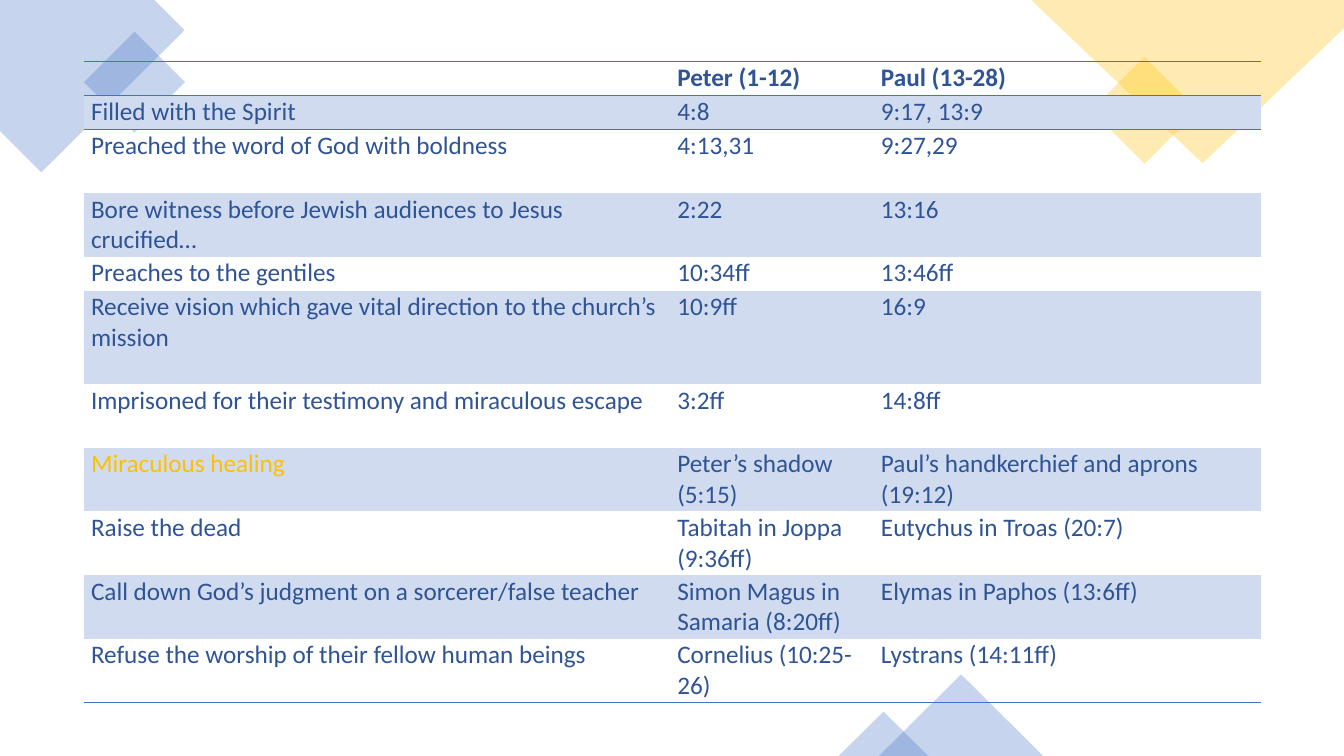
import math
from lxml import etree
from pptx import Presentation
from pptx import util as u
from pptx.dml.color import RGBColor
from pptx.enum import shapes
from pptx.oxml import ns

COLORS = {"blue": "4472C4", "gold": "FFC000", "ink": "2F5496", "band": "D0DBF0"}
COLS, ROWS = 160, 90
NO_STYLE = "{2D5ABB26-0587-4C30-8999-92F81FD0307C}"

# First cell, Peter, Paul, height in text lines
ACTS = [
    ("", "Peter (1-12)", "Paul (13-28)", 1),
    ("Filled with the Spirit", "4:8", "9:17, 13:9", 1),
    ("Preached the word of God with boldness", "4:13,31", "9:27,29", 2),
    ("Bore witness before Jewish audiences to Jesus crucified…", "2:22", "13:16", 2),
    ("Preaches to the gentiles", "10:34ff", "13:46ff", 1),
    ("Receive vision which gave vital direction to the church’s mission",
     "10:9ff", "16:9", 3),
    ("Imprisoned for their testimony and miraculous escape", "3:2ff", "14:8ff", 2),
    ("Miraculous healing", "Peter’s shadow (5:15)",
     "Paul’s handkerchief and aprons (19:12)", 2),
    ("Raise the dead", "Tabitah in Joppa (9:36ff)", "Eutychus in Troas (20:7)", 2),
    ("Call down God’s judgment on a sorcerer/false teacher",
     "Simon Magus in Samaria (8:20ff)", "Elymas in Paphos (13:6ff)", 2),
    ("Refuse the worship of their fellow human beings", "Cornelius (10:25-26)",
     "Lystrans (14:11ff)", 2),
]
HIGHLIGHT = "Miraculous healing"
COL_SHARES = (0.498, 0.173, 0.329)

prs = Presentation()
prs.slide_width, prs.slide_height = u.Inches(13.333), u.Inches(7.5)


def gx(cols):
    return round(cols * prs.slide_width / COLS)


def gy(rows):
    return round(rows * prs.slide_height / ROWS)


def tint(sp, color, rot=0):
    """Translucent fill, no line, no shadow."""
    sp.shadow.inherit = False
    sp.line.fill.background()
    sp.fill.solid()
    sp.fill.fore_color.rgb = RGBColor.from_string(COLORS[color])
    clr = sp.fill._xPr.find(".//" + ns.qn("a:srgbClr"))
    etree.SubElement(clr, ns.qn("a:alpha"), val="30000")
    sp.rotation = rot


def add_preset(s, kind, box, color, rot=0):
    x, y, w, h = box
    sp = s.shapes.add_shape(kind, gx(x), gy(y), gx(w), gy(h))
    tint(sp, color, rot)


def add_turned_outline(s, points, centre, color, rot):
    """Turn the outline back about its centre, then rotate the shape into place."""
    a = math.radians(-rot)
    cx, cy = centre
    turned = []
    for x, y in points:
        dx, dy = x - cx, y - cy
        turned.append((gx(cx + dx * math.cos(a) - dy * math.sin(a)),
                       gy(cy + dx * math.sin(a) + dy * math.cos(a))))
    fb = s.shapes.build_freeform(*turned[0])
    fb.add_line_segments(turned[1:], close=True)
    tint(fb.convert_to_shape(), color, rot)


def top_left_diamonds(s, x, y):
    outline = [(18.36, 0), (0, 0), (0, 15.6), (4.92, 20.52), (21.96, 3.6)]
    add_turned_outline(s, [(x + px, y + py) for px, py in outline],
                       (x + 7.08, y + 5.7), "blue", 315)
    add_preset(s, shapes.MSO_SHAPE.RECTANGLE,
               (x + 11.76, y + 5.52, 8.52, 8.52), "blue", 315)


def top_right_diamonds(s, x, y):
    add_preset(s, shapes.MSO_SHAPE.RECTANGLE, (x + 9, y + 8.64, 9, 9), "gold", 315)
    outline = [(37.24, 0), (0, 0), (20.4, 19.44), (37.24, 3.36)]
    add_turned_outline(s, [(x + px, y + py) for px, py in outline],
                       (x + 18.62, y + 9.72), "gold", 180)


def bottom_triangles(s, x, y):
    for dx, dy, w, h in [(4.8, 0, 19.56, 9.72), (0, 4.44, 10.68, 5.28)]:
        add_preset(s, shapes.MSO_SHAPE.ISOSCELES_TRIANGLE,
                   (x + dx, y + dy, w, h), "blue")


def add_border(cell, side):
    ln = etree.SubElement(cell._tc.get_or_add_tcPr(), ns.qn("a:ln" + side),
                          w=str(u.Pt(1)))
    fill = etree.SubElement(ln, ns.qn("a:solidFill"))
    etree.SubElement(fill, ns.qn("a:srgbClr"), val=COLORS["blue"])


def fill_cell(cell, words, row):
    cell.margin_left = cell.margin_right = u.Inches(0.07)
    cell.margin_top, cell.margin_bottom = u.Inches(0.01), 0
    # Rules above and below the header, and under the last row
    if row < 2:
        add_border(cell, "T")
    if row in (0, len(ACTS) - 1):
        add_border(cell, "B")
    # Odd rows are banded
    if row % 2:
        cell.fill.solid()
        cell.fill.fore_color.rgb = RGBColor.from_string(COLORS["band"])
    else:
        cell.fill.background()
    if words:
        r = cell.text_frame.paragraphs[0].add_run()
        r.text = words
        r.font.name, r.font.size, r.font.bold = "Calibri", u.Pt(18), row == 0
        color = "gold" if words == HIGHLIGHT else "ink"
        r.font.color.rgb = RGBColor.from_string(COLORS[color])


def comparison_table(s, x, y, w):
    heights = [3.53 * lines + 0.52 for *_, lines in ACTS]
    frame = s.shapes.add_table(len(ACTS), len(COL_SHARES),
                               gx(x), gy(y), gx(w), gy(sum(heights)))
    table = frame.table
    table._tbl.tblPr.find(ns.qn("a:tableStyleId")).text = NO_STYLE
    for col, share in zip(table.columns, COL_SHARES):
        col.width = gx(w * share)
    for i, (*cells, _) in enumerate(ACTS):
        table.rows[i].height = gy(heights[i])
        for j, words in enumerate(cells):
            fill_cell(table.cell(i, j), words, i)


def main():
    s = prs.slides.add_slide(prs.slide_layouts[6])
    top_left_diamonds(s, 0, 0)
    top_right_diamonds(s, 122.76, 0)
    bottom_triangles(s, 99.84, 80.28)
    comparison_table(s, 10, 7.32, 140.16)
    prs.save("out.pptx")


if __name__ == "__main__":
    main()
